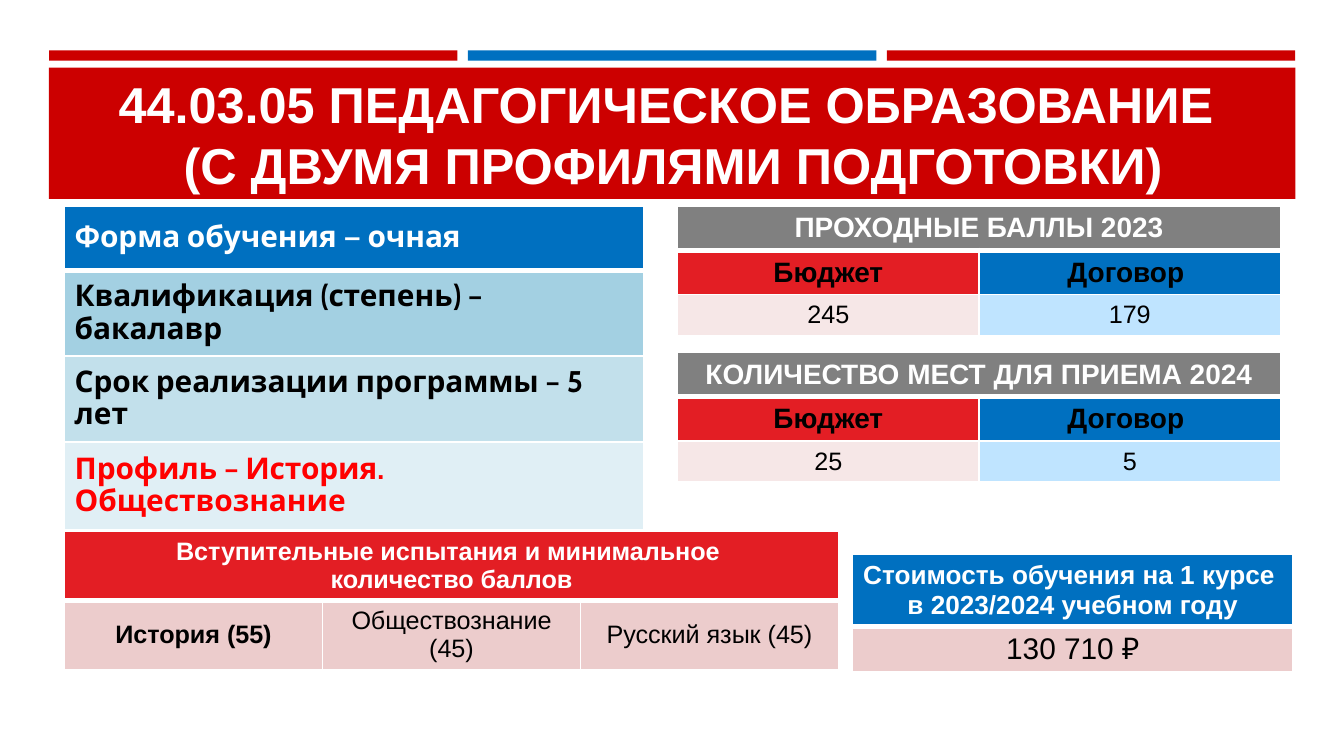
from dataclasses import dataclass

from lxml import etree
from pptx import Presentation
from pptx.dml.color import RGBColor
from pptx.enum.shapes import MSO_SHAPE
from pptx.enum.text import MSO_ANCHOR, PP_ALIGN
from pptx.oxml.ns import qn
from pptx.util import Pt

RECTANGLE = MSO_SHAPE.RECTANGLE
MIDDLE = MSO_ANCHOR.MIDDLE
LEFT, CENTER = PP_ALIGN.LEFT, PP_ALIGN.CENTER


@dataclass(frozen=True)
class Theme:
    """Colours, fonts and type sizes of the slide."""
    white: str = "FFFFFF"
    black: str = "000000"
    band: str = "CC0000"
    blue: str = "0070C0"
    red: str = "E31E24"
    alert: str = "FF0000"
    gray: str = "808080"
    pink: str = "ECCCCC"
    pale_pink: str = "F6E7E7"
    pale_blue: str = "BFE4FF"
    blue_steps: tuple = ("A3D0E2", "C2E0EB", "E0EFF5")
    font: str = "Arial"
    facts_font: str = "Cabin"
    title_size: float = 27
    large: float = 16
    heading: float = 15
    cost_heading: float = 14
    body: float = 13.5


THEME = Theme()


@dataclass(frozen=True)
class Entry:
    """Content and look of one table cell."""
    lines: tuple
    fill: str
    size: float
    color: str = THEME.black
    bold: bool = True
    font: str = THEME.font
    align: PP_ALIGN = CENTER
    spacing: float = 1.0


def add_span(para, text, size, color, bold, font):
    """Add one formatted run to a paragraph."""
    span = para.add_run()
    span.text = text
    span.font.size = Pt(size)
    span.font.bold = bold
    span.font.name = font
    span.font.color.rgb = RGBColor.from_string(color)


def add_bar(page, left, top, width, height, color):
    """Add a plain filled rectangle."""
    bar = page.shapes.add_shape(RECTANGLE, Pt(left), Pt(top), Pt(width), Pt(height))
    bar.shadow.inherit = False
    bar.fill.solid()
    bar.fill.fore_color.rgb = RGBColor.from_string(color)
    bar.line.fill.background()


def set_title(page, lines):
    """Place the title over the band and fill in its lines."""
    title = page.shapes.title
    title.left, title.top, title.width, title.height = Pt(34.8), Pt(41.8), Pt(651.6), Pt(60)
    title.element.getparent().append(title.element)
    frame = title.text_frame
    frame.word_wrap = True
    frame.vertical_anchor = MIDDLE
    frame.margin_top = frame.margin_bottom = 0
    para = frame.paragraphs[0]
    para.alignment = CENTER
    for index, line in enumerate(lines):
        if index:
            para.add_line_break()
        add_span(para, line, THEME.title_size, THEME.white, True, THEME.font)


def set_borders(cell, row_index):
    """Draw white cell borders, thick between the first two rows."""
    properties = cell._tc.get_or_add_tcPr()
    widths = {"lnL": 1, "lnR": 1, "lnT": 3 if row_index == 1 else 1, "lnB": 1 if row_index else 3}
    for side, width in widths.items():
        line = etree.SubElement(properties, qn(f"a:{side}"), w=str(Pt(width)))
        fill = etree.SubElement(line, qn("a:solidFill"))
        etree.SubElement(fill, qn("a:srgbClr"), val=THEME.white)


def fill_cell(cell, entry):
    """Write an entry into a cell."""
    cell.fill.solid()
    cell.fill.fore_color.rgb = RGBColor.from_string(entry.fill)
    cell.vertical_anchor = MIDDLE
    cell.margin_left = cell.margin_right = Pt(5.4)
    cell.margin_top = cell.margin_bottom = Pt(2.7)
    frame = cell.text_frame
    for index, line in enumerate(entry.lines):
        para = frame.add_paragraph() if index else frame.paragraphs[0]
        para.alignment = entry.align
        para.line_spacing = entry.spacing
        add_span(para, line, entry.size, entry.color, entry.bold, entry.font)


def add_grid(page, left, top, width, heights, rows):
    """Add a table of equal columns, merging a lone heading across them."""
    columns = len(rows[-1])
    frame = page.shapes.add_table(
        len(rows), columns, Pt(left), Pt(top), Pt(width), Pt(sum(heights)))
    table = frame.table
    for column in table.columns:
        column.width = Pt(width / columns)
    for row_index, (height, entries) in enumerate(zip(heights, rows)):
        table.rows[row_index].height = Pt(height)
        for column_index in range(columns):
            set_borders(table.cell(row_index, column_index), row_index)
        if len(entries) < columns:
            table.cell(row_index, 0).merge(table.cell(row_index, columns - 1))
        for column_index, entry in enumerate(entries):
            fill_cell(table.cell(row_index, column_index), entry)


def add_facts(page):
    """Add the list of programme facts."""
    facts = (
        ("Форма обучения — очная", THEME.blue, THEME.white),
        ("Квалификация (степень) – бакалавр", THEME.blue_steps[0], THEME.black),
        ("Срок реализации программы – 5 лет", THEME.blue_steps[1], THEME.black),
        ("Профиль – История. Обществознание", THEME.blue_steps[2], THEME.alert),
    )
    rows = [[Entry((text,), fill, THEME.large, color, font=THEME.facts_font,
                   align=LEFT, spacing=0.9)] for text, fill, color in facts]
    add_grid(page, 34.6, 110.2, 310.3, (34.5, 46, 46, 47), rows)


def add_places(page, top, heading, budget, contract):
    """Add a table comparing budget and contract figures."""
    rows = [
        [Entry((heading,), THEME.gray, THEME.heading, THEME.white)],
        [Entry(("Бюджет",), THEME.red, THEME.heading),
         Entry(("Договор ",), THEME.blue, THEME.heading)],
        [Entry((budget,), THEME.pale_pink, THEME.body, bold=False),
         Entry((contract,), THEME.pale_blue, THEME.body, bold=False)],
    ]
    add_grid(page, 363, 0 + top, 323, (23.8, 23.8, 22), rows)


def add_exams(page):
    """Add the table of entrance exams."""
    heading = ("Вступительные испытания и минимальное ", "количество баллов")
    exams = ("История (55)", "Обществознание (45)", "Русский язык (45)")
    rows = [
        [Entry(heading, THEME.red, THEME.body, THEME.white)],
        [Entry((exam,), THEME.pink, THEME.body, bold=index == 0)
         for index, exam in enumerate(exams)],
    ]
    add_grid(page, 34.6, 284.7, 414.6, (37, 37), rows)


def add_cost(page):
    """Add the tuition cost table."""
    heading = ("Стоимость обучения на 1 курсе ", "в 2023/2024 учебном году")
    rows = [
        [Entry(heading, THEME.blue, THEME.cost_heading, THEME.white)],
        [Entry(("130 710 ₽",), THEME.pink, THEME.large, bold=False)],
    ]
    add_grid(page, 456.7, 297, 236, (38.5, 24.5), rows)


def main():
    """Build the slide and save the deck."""
    deck = Presentation()
    deck.slide_width, deck.slide_height = Pt(720), Pt(405)
    page = deck.slides.add_slide(deck.slide_layouts[5])
    for index, color in enumerate((THEME.band, THEME.blue, THEME.band)):
        add_bar(page, 26.3 + index * 224.4, 27, 218.8, 5.5, color)
    add_bar(page, 26.2, 36.3, 667.8, 70.3, THEME.band)
    set_title(page, ("44.03.05 ПЕДАГОГИЧЕСКОЕ ОБРАЗОВАНИЕ ", "(С ДВУМЯ ПРОФИЛЯМИ ПОДГОТОВКИ)"))
    add_facts(page)
    add_exams(page)
    add_places(page, 110.2, "ПРОХОДНЫЕ БАЛЛЫ 2023", "245", "179")
    add_cost(page)
    add_places(page, 188.8, "КОЛИЧЕСТВО МЕСТ ДЛЯ ПРИЕМА 2024", "25", "5")
    deck.save("out.pptx")


if __name__ == "__main__":
    main()
